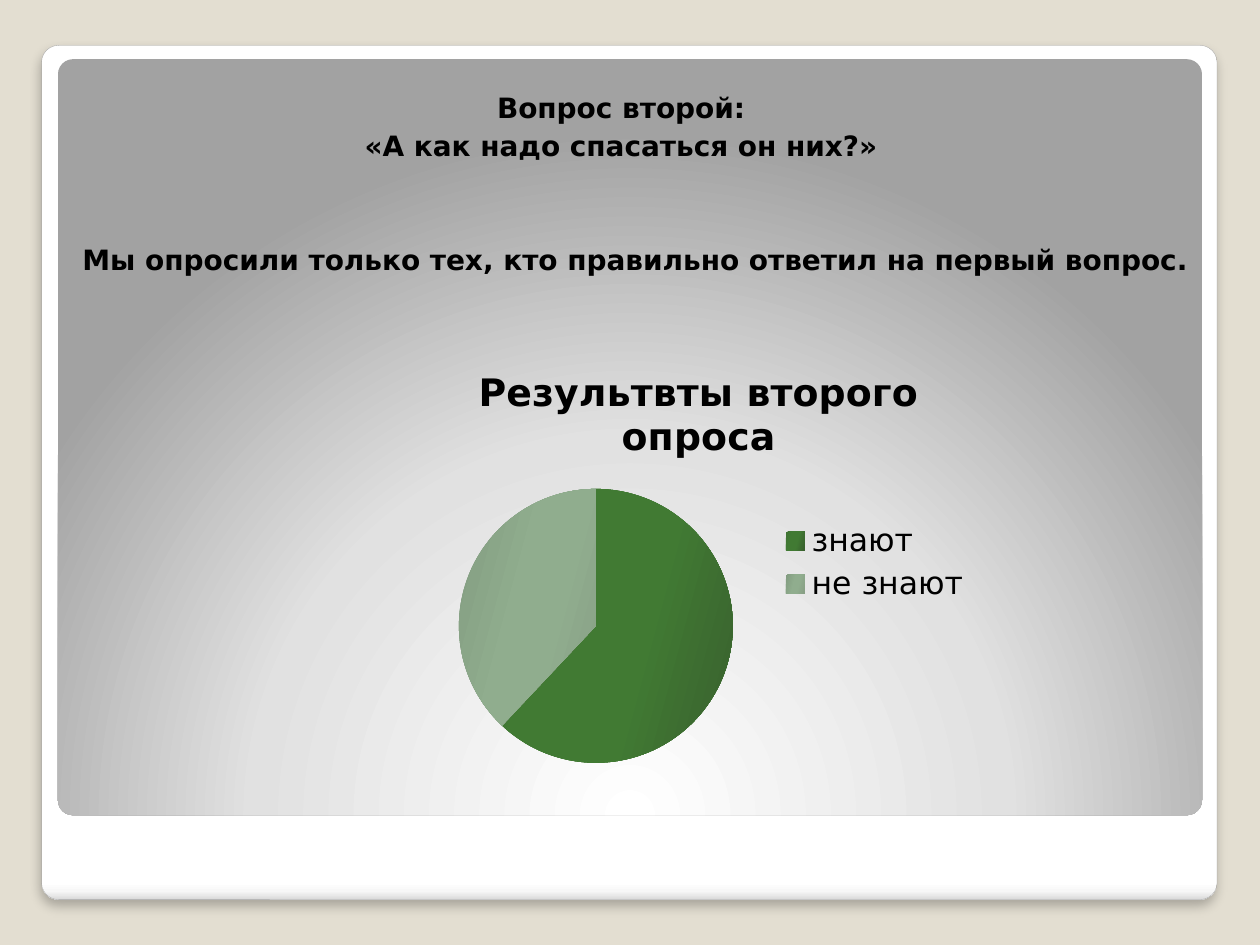
from dataclasses import dataclass

from lxml import etree
from pptx import Presentation
from pptx.chart.data import CategoryChartData
from pptx.dml.color import RGBColor
from pptx.enum.chart import XL_CHART_TYPE, XL_LEGEND_POSITION
from pptx.enum.shapes import MSO_SHAPE
from pptx.enum.text import MSO_ANCHOR, MSO_AUTO_SIZE, PP_ALIGN
from pptx.oxml import parse_xml
from pptx.oxml.ns import nsdecls, qn
from pptx.util import Pt

ROUNDED = MSO_SHAPE.ROUNDED_RECTANGLE
PIE = XL_CHART_TYPE.PIE
LEGEND_RIGHT = XL_LEGEND_POSITION.RIGHT
TOP = MSO_ANCHOR.TOP
NO_AUTOFIT = MSO_AUTO_SIZE.NONE
CENTER, RIGHT = PP_ALIGN.CENTER, PP_ALIGN.RIGHT

FONT = "DejaVu Sans"
BLACK = RGBColor(0x00, 0x00, 0x00)
WHITE = RGBColor(0xFF, 0xFF, 0xFF)
BEIGE = RGBColor(0xE3, 0xDE, 0xD1)
EDGE = RGBColor(0xA4, 0xA4, 0xA4)
NEAR_WHITE = RGBColor(0xF7, 0xF7, 0xF7)
PALE_GRAY = RGBColor(0xDA, 0xDA, 0xDA)
LIGHT_GRAY = RGBColor(0xE1, 0xE1, 0xE1)
MID_GRAY = RGBColor(0xA2, 0xA2, 0xA2)
GREEN = RGBColor(0x41, 0x7A, 0x33)
DULL_GREEN = RGBColor(0x3F, 0x73, 0x33)
DEEP_GREEN = RGBColor(0x39, 0x60, 0x2E)
SAGE = RGBColor(0x90, 0xAD, 0x8E)
DULL_SAGE = RGBColor(0x82, 0x9C, 0x80)
GRAY_SAGE = RGBColor(0x88, 0x9F, 0x85)

LINEAR_DOWN = '<a:lin ang="5400000" scaled="0"/>'
LINEAR_SLANTED = '<a:lin ang="900000" scaled="0"/>'
RADIAL_BELOW = ('<a:path path="circle"><a:fillToRect l="50000" t="175000" '
                'r="50000" b="-75000"/></a:path>')


@dataclass(frozen=True)
class Gradient:
    stops: tuple[tuple[int, RGBColor], ...]
    direction: str


@dataclass(frozen=True)
class Panel:
    left: float
    top: float
    width: float
    height: float
    gradient: Gradient
    framed: bool


@dataclass(frozen=True)
class Answer:
    label: str
    percent: int
    gradient: Gradient


@dataclass(frozen=True)
class Line:
    text: str
    align: PP_ALIGN
    space_before: float


PANELS = (
    Panel(23.76, 25.92, 671.76, 488.16, Gradient(
        ((0, WHITE), (98, WHITE), (99, NEAR_WHITE), (100, PALE_GRAY)),
        LINEAR_DOWN), True),
    Panel(33.12, 33.84, 653.76, 432, Gradient(
        ((0, WHITE), (55, LIGHT_GRAY), (100, MID_GRAY)), RADIAL_BELOW), False),
)
ANSWERS = (
    Answer("знают", 62, Gradient(
        ((0, DULL_GREEN), (30, GREEN), (60, GREEN), (100, DEEP_GREEN)),
        LINEAR_SLANTED)),
    Answer("не знают", 38, Gradient(
        ((0, DULL_SAGE), (45, SAGE), (65, SAGE), (100, GRAY_SAGE)),
        LINEAR_SLANTED)),
)
QUESTION = (
    Line("Вопрос второй:", CENTER, 2.5),
    Line("«А как надо спасаться он них?»", CENTER, 2.5),
    Line("Мы опросили только тех, кто правильно ответил на первый вопрос.",
         RIGHT, 46),
)
RESULTS_TITLE = "Результвты второго опроса"


def apply_gradient(properties, gradient: Gradient) -> None:
    stops = "".join(
        f'<a:gs pos="{position * 1000}"><a:srgbClr val="{color}"/></a:gs>'
        for position, color in gradient.stops)
    shading = parse_xml(
        f'<a:gradFill {nsdecls("a")} rotWithShape="1"><a:gsLst>{stops}</a:gsLst>'
        f'{gradient.direction}</a:gradFill>')
    properties.replace(properties.find(qn("a:solidFill")), shading)


def draw_panel(slide, panel: Panel) -> None:
    card = slide.shapes.add_shape(ROUNDED, Pt(panel.left), Pt(panel.top),
                                  Pt(panel.width), Pt(panel.height))
    card.adjustments[0] = 0.02
    card.shadow.inherit = False
    card.fill.solid()
    properties = card._element.spPr
    apply_gradient(properties, panel.gradient)
    if not panel.framed:
        card.line.fill.background()
        return
    card.line.color.rgb = EDGE
    card.line.width = Pt(0.16)
    properties.find(qn("a:effectLst")).append(parse_xml(
        f'<a:outerShdw {nsdecls("a")} blurRad="{Pt(6)}" dist="{Pt(4)}" '
        'dir="5400000" algn="ctr" rotWithShape="0"><a:srgbClr val="000000">'
        '<a:alpha val="25000"/></a:srgbClr></a:outerShdw>'))


def write_text(paragraph, text: str, *, size: float, bold: bool = True,
               color: RGBColor = BLACK, align: PP_ALIGN = CENTER,
               space_before: float = 0) -> None:
    paragraph.alignment = align
    paragraph.space_before = Pt(space_before)
    run = paragraph.add_run()
    run.text = text
    run.font.name = FONT
    run.font.size = Pt(size)
    run.font.bold = bold
    run.font.color.rgb = color


def fill_body(body, lines: tuple[Line, ...]) -> None:
    body.left, body.top, body.width, body.height = (
        Pt(16.56), Pt(44.64), Pt(669.6), Pt(121.68))
    frame = body.text_frame
    frame.word_wrap = True
    frame.auto_size = NO_AUTOFIT
    frame.vertical_anchor = TOP
    frame.margin_left, frame.margin_top = Pt(14.4), Pt(7.2)
    frame.margin_right, frame.margin_bottom = Pt(7.2), Pt(3.6)
    for index, line in enumerate(lines):
        paragraph = frame.add_paragraph() if index else frame.paragraphs[0]
        write_text(paragraph, line.text, size=16, align=line.align,
                   space_before=line.space_before)
        properties = paragraph._p.get_or_add_pPr()
        properties.set("marL", str(Pt(20.88)))
        properties.set("indent", str(Pt(-20.88)))
        etree.SubElement(properties, qn("a:buNone"))


def draw_results(slide, answers: tuple[Answer, ...]) -> None:
    survey = CategoryChartData()
    survey.categories = [answer.label for answer in answers]
    survey.add_series(RESULTS_TITLE, [answer.percent for answer in answers])
    chart = slide.shapes.add_chart(PIE, Pt(236.16), Pt(196.56), Pt(326.16),
                                   Pt(249.84), survey).chart
    chart.font.name = FONT
    chart.font.size = Pt(18)
    chart.font.color.rgb = BLACK
    chart.has_title = True
    write_text(chart.chart_title.text_frame.paragraphs[0], RESULTS_TITLE,
               size=21.6)
    chart.has_legend = True
    chart.legend.position = LEGEND_RIGHT
    chart.legend.include_in_layout = False

    pie = chart.plots[0]
    pie.vary_by_categories = True
    slices = pie.series[0]
    for index, answer in enumerate(answers):
        share = slices.points[index].format
        share.fill.solid()
        share.line.fill.background()
        apply_gradient(slices._element.xpath("c:dPt/c:spPr")[index],
                       answer.gradient)

    plot_area = chart._chartSpace.chart.plotArea
    for old_layout in plot_area.findall(qn("c:layout")):
        plot_area.remove(old_layout)
    plot_area.insert(0, parse_xml(
        f'<c:layout {nsdecls("c")}><c:manualLayout><c:layoutTarget val="inner"/>'
        '<c:xMode val="edge"/><c:yMode val="edge"/><c:x val="0.08"/>'
        '<c:y val="0.33"/><c:w val="0.48"/><c:h val="0.63"/>'
        '</c:manualLayout></c:layout>'))


def main() -> None:
    deck = Presentation()
    deck.slide_width, deck.slide_height = Pt(720), Pt(540)
    slide = deck.slides.add_slide(deck.slide_layouts[1])
    slide.background.fill.solid()
    slide.background.fill.fore_color.rgb = BEIGE
    heading = slide.shapes.title._element
    heading.getparent().remove(heading)
    body = slide.placeholders[1]
    for panel in PANELS:
        draw_panel(slide, panel)
    slide.shapes._spTree.append(body._element)
    fill_body(body, QUESTION)
    draw_results(slide, ANSWERS)
    deck.save("out.pptx")


if __name__ == "__main__":
    main()
